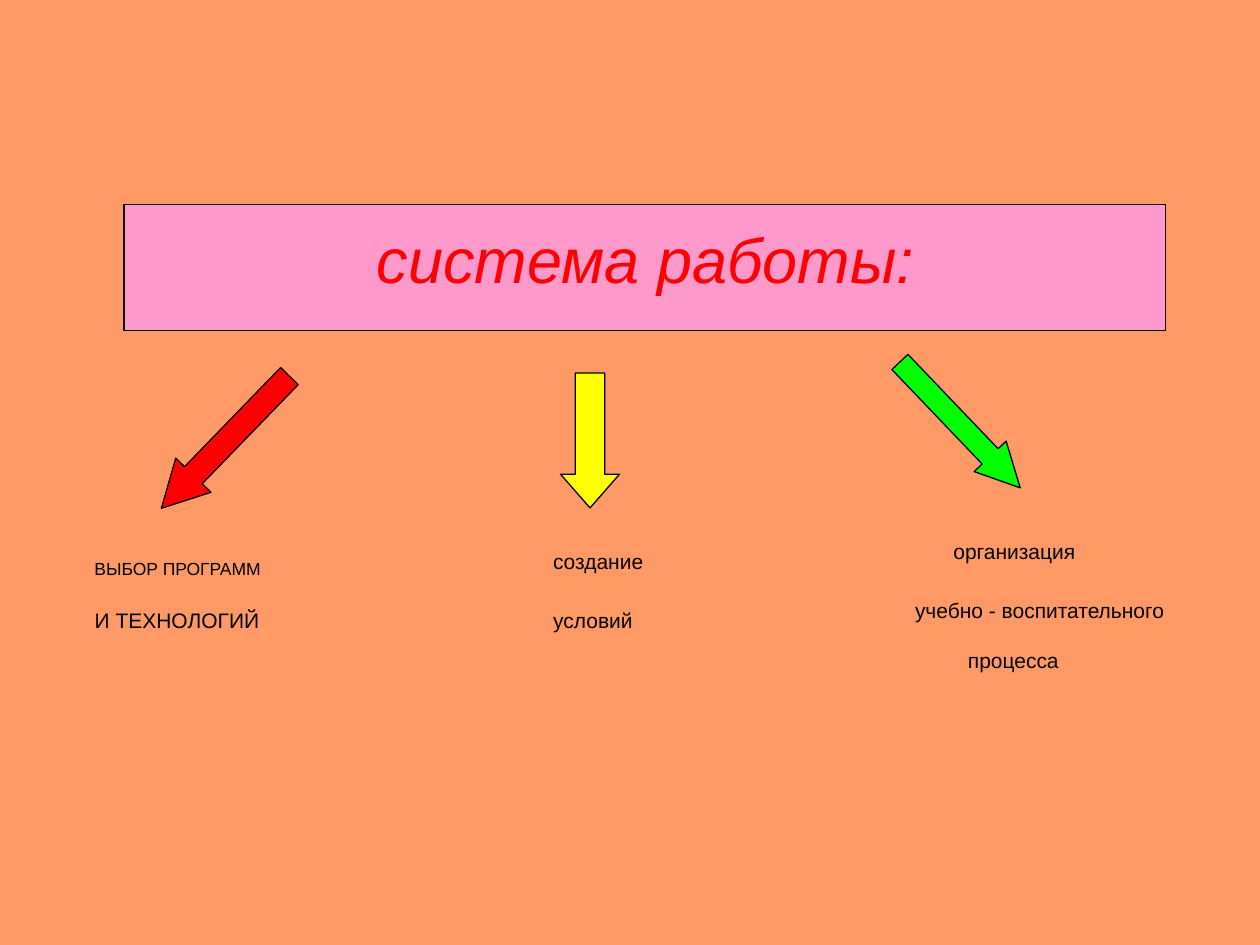
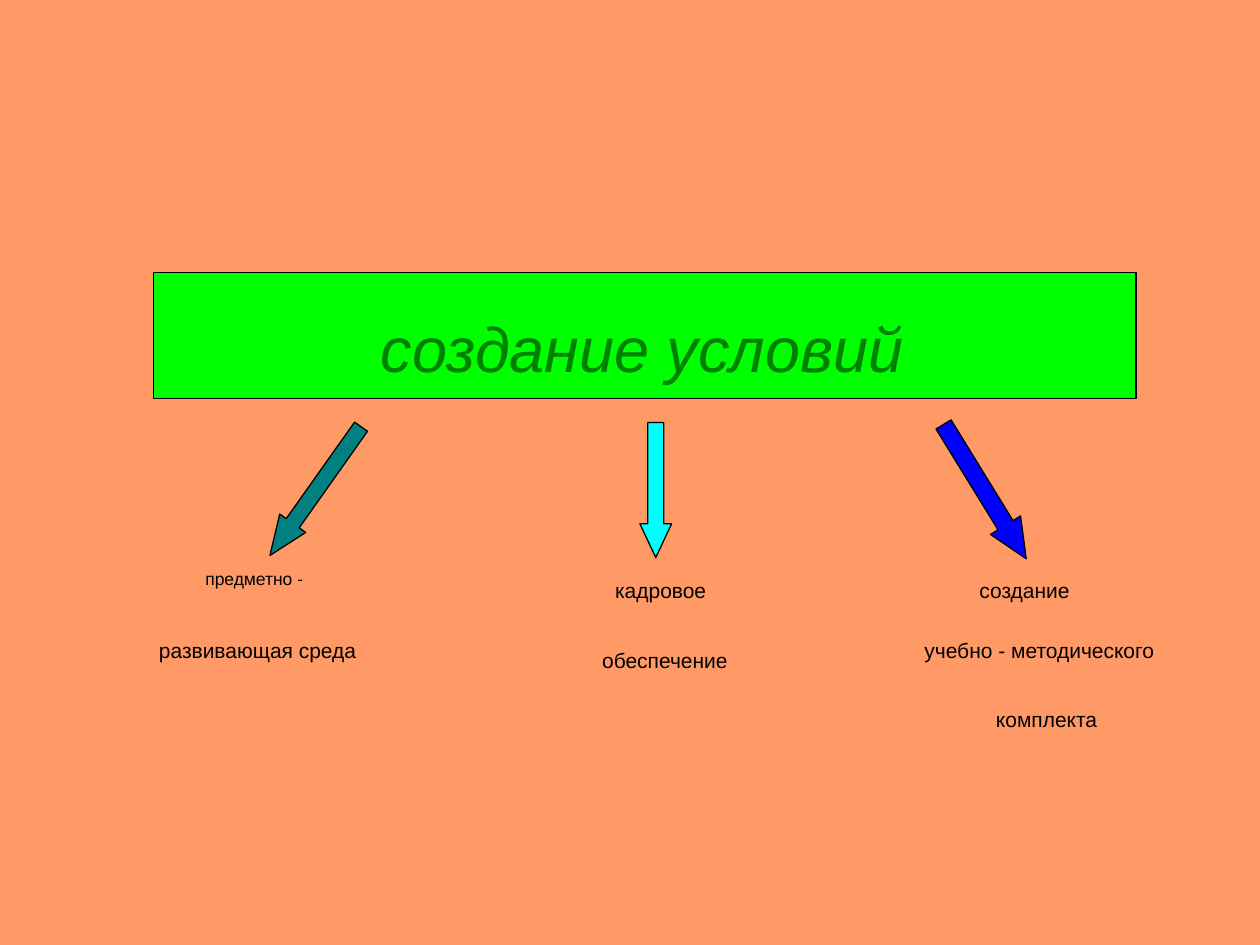
"""Two scheme slides: a heading bar with three arrows leading to captions."""
from pptx import Presentation
from pptx import util as u
from pptx.dml.color import RGBColor
from pptx.enum import shapes, text

COLOURS = {
    "background": "FF9966", "black": "000000", "pink": "FF99CC",
    "red": "FF0000", "yellow": "FFFF00", "lime": "00FF00",
    "green": "008000", "teal": "008080", "cyan": "00FFFF", "blue": "0000FF",
}
FONT = "Arial"
HEADING_SIZE, CAPTION_SIZE, SMALL_SIZE = 36, 12, 10
HEAD_SHARE = 0.25


class SchemeDeck:
    """Holds the shared style and the current slide."""

    def __init__(self):
        self.deck = Presentation()
        self.deck.slide_width, self.deck.slide_height = u.Cm(25.4), u.Cm(19.05)
        self.page = None

    def colour(self, name):
        return RGBColor.from_string(COLOURS[name])

    def add_page(self):
        self.page = self.deck.slides.add_slide(self.deck.slide_layouts[6])
        fill = self.page.background.fill
        fill.solid()
        fill.fore_color.rgb = self.colour("background")

    def outlined(self, kind, place, fill):
        shape = self.page.shapes.add_shape(kind, *map(u.Cm, place))
        shape.shadow.inherit = False
        shape.fill.solid()
        shape.fill.fore_color.rgb = self.colour(fill)
        shape.line.color.rgb = self.colour("black")
        shape.line.width = u.Pt(0.75)
        return shape

    def bar(self, place, fill):
        self.outlined(shapes.MSO_SHAPE.RECTANGLE, place, fill)

    def arrow(self, place, fill, angle):
        arrow = self.outlined(shapes.MSO_SHAPE.DOWN_ARROW, place, fill)
        width, height = place[2:]
        arrow.adjustments[0] = 0.5
        arrow.adjustments[1] = HEAD_SHARE * height / width
        arrow.rotation = angle

    def words(self, content, place, size=CAPTION_SIZE, colour="black", italic=False):
        box = self.page.shapes.add_textbox(*map(u.Cm, place))
        frame = box.text_frame
        frame.word_wrap = False
        frame.margin_left = frame.margin_right = 0
        para = frame.paragraphs[0]
        para.text = content
        para.alignment = text.PP_ALIGN.CENTER
        para.font.name = FONT
        para.font.size = u.Pt(size)
        para.font.italic = italic
        para.font.color.rgb = self.colour(colour)

    def scheme(self, bar, heading, branches):
        self.add_page()
        self.bar(*bar)
        content, place, colour = heading
        self.words(content, place, HEADING_SIZE, colour, italic=True)
        for arrow, captions in branches:
            self.arrow(*arrow)
            for caption in captions:
                self.words(*caption)


SCHEMES = [
    {
        "bar": ((2.5, 4.12, 21, 2.54), "pink"),
        "heading": ("система работы:", (7.26, 4.32, 11.5, 1.6), "red"),
        "branches": [
            (((4.05, 7.06, 0.99, 3.71), "red", 44.1), [
                ("ВЫБОР ПРОГРАММ", (1.78, 11.13, 3.6, 0.43), SMALL_SIZE),
                ("И ТЕХНОЛОГИЙ", (1.77, 12.12, 3.6, 0.48)),
            ]),
            (((11.3, 7.52, 1.19, 2.72), "yellow", 0), [
                ("создание", (10.65, 10.94, 2.82, 0.48)),
                ("условий", (10.7, 12.12, 2.51, 0.61)),
            ]),
            (((18.91, 6.81, 0.89, 3.51), "lime", 316.3), [
                ("организация", (18.9, 10.73, 3.1, 0.48)),
                ("учебно - воспитательного", (18.31, 11.92, 5.3, 0.48)),
                ("процесса", (19.38, 12.93, 2.1, 0.48)),
            ]),
        ],
    },
    {
        "bar": ((3.1, 5.49, 19.8, 2.54), "lime"),
        "heading": ("создание условий", (6.9, 6.12, 12.09, 1.6), "green"),
        "branches": [
            (((6.04, 8.31, 0.64, 3.18), "teal", 35.3), [
                ("предметно -", (3.45, 11.33, 3.35, 1.02), SMALL_SIZE),
                ("развивающая среда", (3.1, 12.73, 4.19, 1.19)),
            ]),
            (((12.9, 8.52, 0.64, 2.72), "cyan", 0), [
                ("кадровое", (11.91, 11.52, 2.82, 0.99)),
                ("обеспечение", (11.5, 12.93, 3.81, 0.99)),
            ]),
            (((19.5, 8.32, 0.71, 3.18), "blue", 328.4), [
                ("создание", (18.9, 11.52, 3.51, 0.79)),
                ("учебно - методического", (18.49, 12.73, 4.93, 0.99)),
                ("комплекта", (19.5, 14.12, 3.2, 0.81)),
            ]),
        ],
    },
]


def main():
    """Builds both schemes and saves the deck."""
    builder = SchemeDeck()
    for scheme in SCHEMES:
        builder.scheme(**scheme)
    builder.deck.save("out.pptx")


if __name__ == "__main__":
    main()
